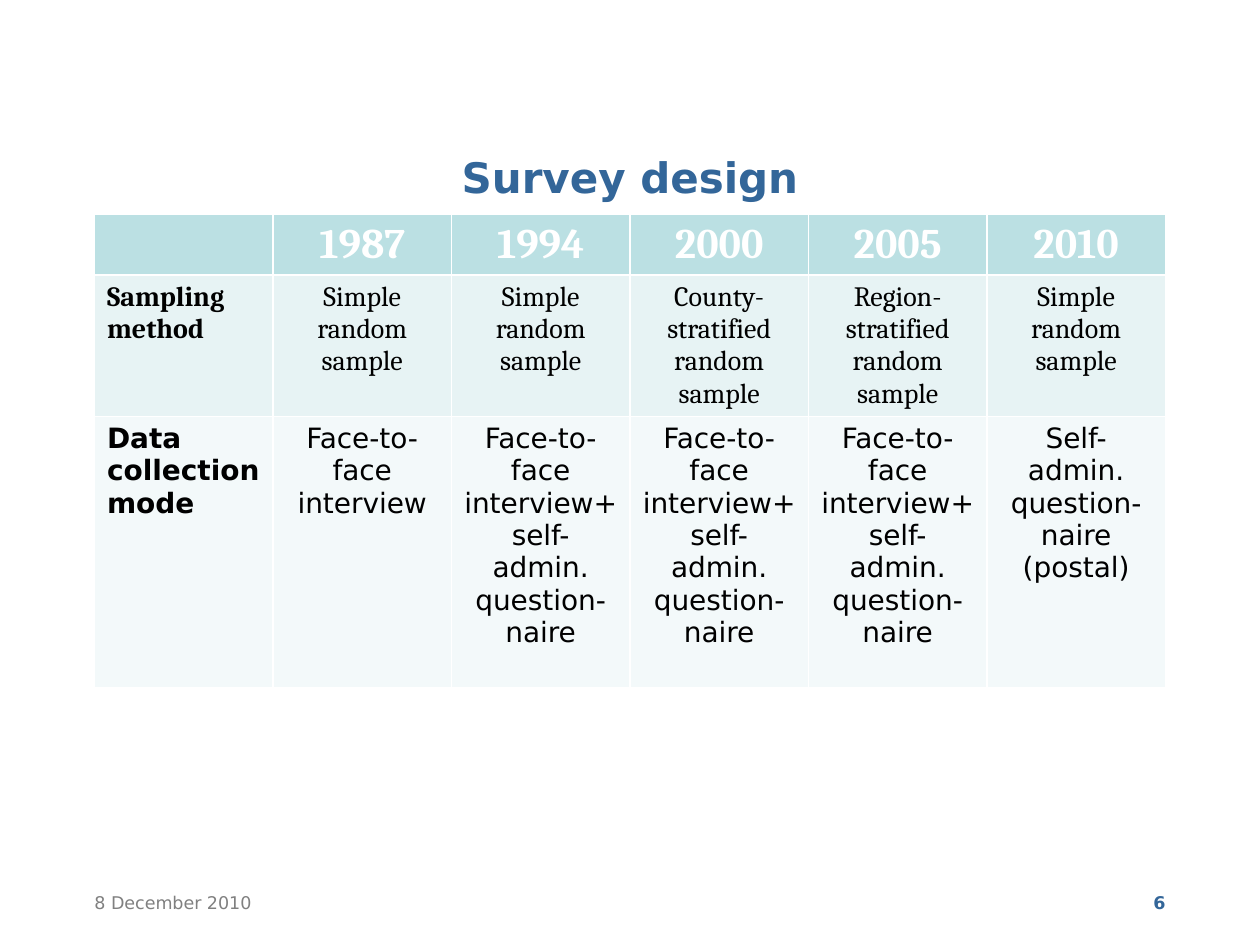
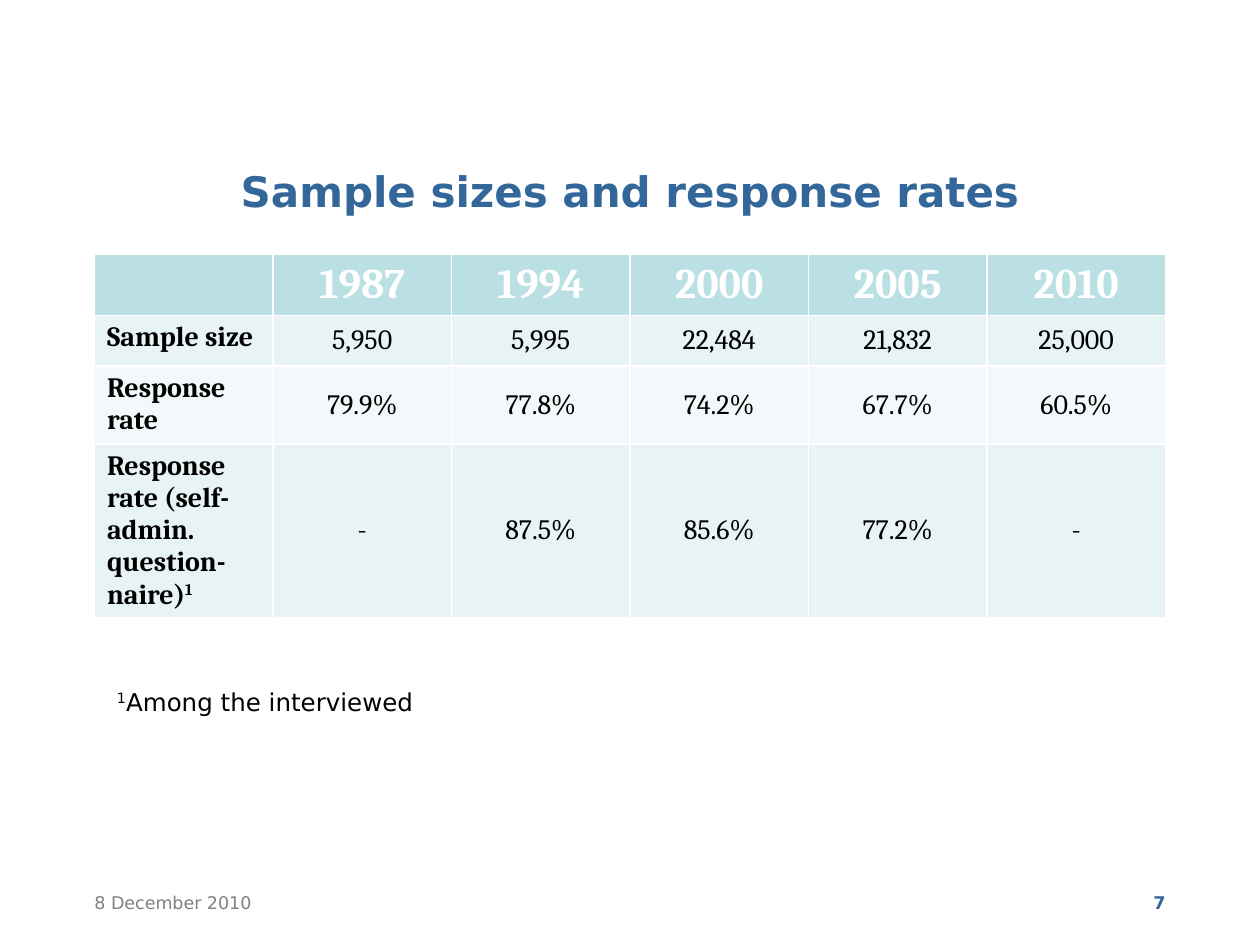
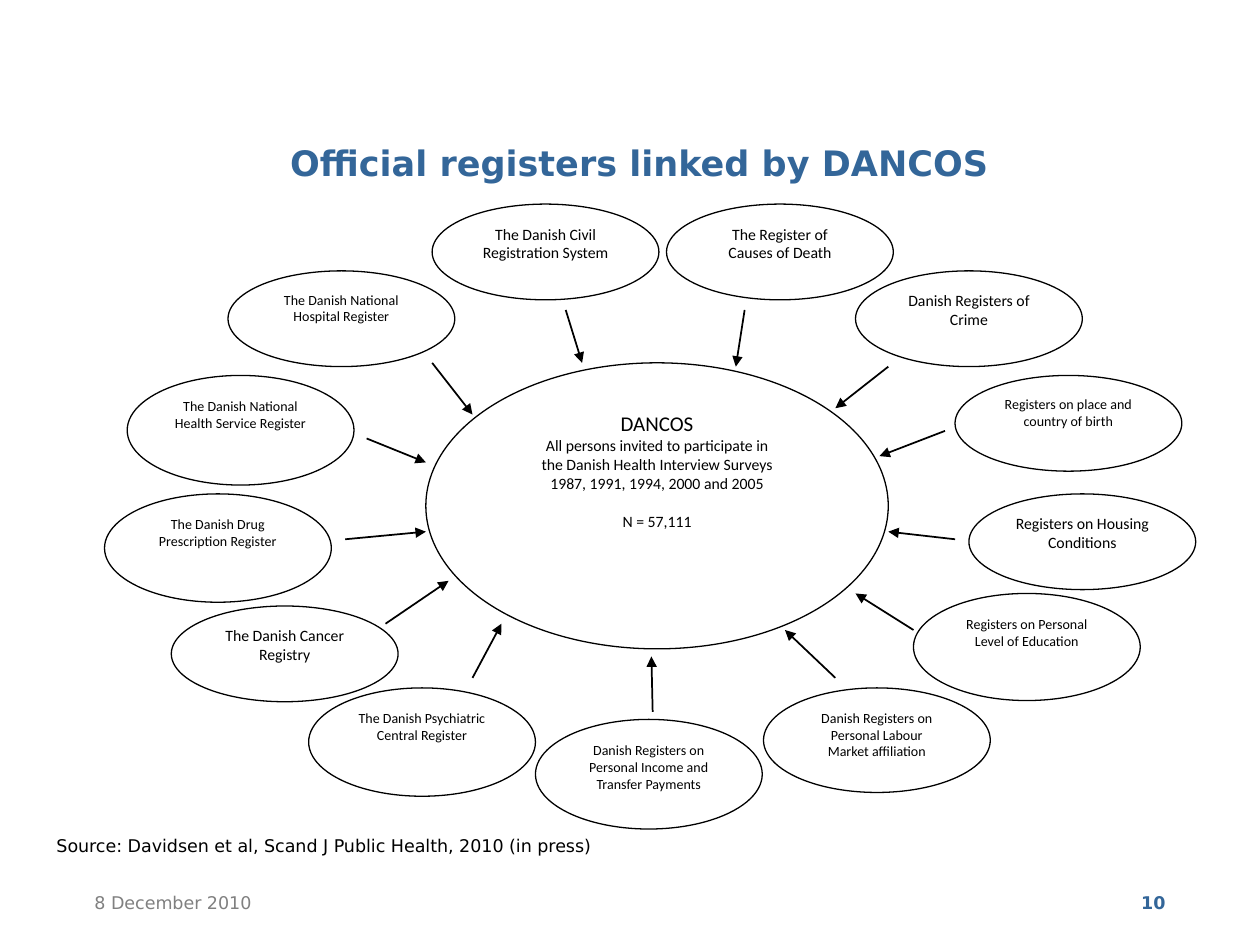
"""Builds three slides on Danish health surveys: design, response rates and linked registers."""
from dataclasses import dataclass

from lxml import etree
from pptx import Presentation
from pptx import util as u
from pptx.dml.color import RGBColor
from pptx.enum import shapes, text
from pptx.oxml.ns import qn

Inches = u.Inches
SANS, SERIF, DIAGRAM_FONT = "DejaVu Sans", "Cambria", "Calibri"
BLUE, GREY, BLACK, WHITE = "336699", "808080", "000000", "FFFFFF"
HEADER_FILL, BAND_FILLS = "BBE0E3", ("E7F3F4", "F3F9FA")
LEFT, CENTER, RIGHT = text.PP_ALIGN.LEFT, text.PP_ALIGN.CENTER, text.PP_ALIGN.RIGHT
TOP, MIDDLE, BOTTOM = text.MSO_ANCHOR.TOP, text.MSO_ANCHOR.MIDDLE, text.MSO_ANCHOR.BOTTOM
MARGIN, CONTENT_WIDTH = 0.75, 8.5
YEARS = ("1987", "1994", "2000", "2005", "2010")
REGISTER_WIDTH = 1.8


@dataclass
class Row:
    label: str
    values: tuple[str, ...]
    height: float
    font: str = SERIF


@dataclass
class Register:
    name: str
    left: float
    top: float
    height: float
    size: int
    arrow_from: tuple[float, float]
    arrow_to: tuple[float, float]


DESIGN_ROWS = (
    Row("Sampling method",
        ("Simple random sample", "Simple random sample", "County-stratified random sample",
         "Region-stratified random\nsample", "Simple random sample"), 1.12),
    Row("Data collection mode",
        ("Face-to-face interview",
         *["Face-to-face interview+ self-admin. question-naire"] * 3,
         "Self-admin. question-naire (postal)"), 2.15, SANS),
)

RESPONSE_ROWS = (
    Row("Sample size", ("5,950", "5,995", "22,484", "21,832", "25,000"), 0.4),
    Row("Response rate", ("79.9%", "77.8%", "74.2%", "67.7%", "60.5%"), 0.62),
    Row("Response rate (self-admin. question-naire)^1",
        ("-", "87.5%", "85.6%", "77.2%", "-"), 1.37),
)

REGISTERS = (
    Register("The Danish National Health Service Register",
             1.01, 2.98, 0.87, 8, (2.91, 3.48), (3.38, 3.67)),
    Register("The Danish National Hospital Register",
             1.81, 2.15, 0.76, 8, (3.43, 2.88), (3.75, 3.29)),
    Register("The Register of Causes of Death",
             5.29, 1.62, 0.76, 9, (5.91, 2.46), (5.84, 2.91)),
    Register("The Danish Civil Registration System",
             3.43, 1.62, 0.76, 9, (4.49, 2.46), (4.62, 2.88)),
    Register("Danish Registers of Crime",
             6.79, 2.15, 0.76, 9, (7.05, 2.91), (6.63, 3.24)),
    Register("Registers on Housing Conditions",
             7.69, 3.92, 0.76, 9, (7.58, 4.28), (7.05, 4.22)),
    Register("The Danish Drug Prescription Register",
             0.83, 3.92, 0.86, 8, (2.74, 4.28), (3.38, 4.22)),
    Register("Registers on place and country of birth",
             7.58, 2.98, 0.76, 8, (7.5, 3.42), (6.98, 3.62)),
    Register("The Danish Psychiatric Central Register",
             2.45, 5.46, 0.86, 8, (3.75, 5.38), (3.98, 4.95)),
    Register("Danish Registers on Personal Income and Transfer Payments",
             4.25, 5.71, 0.87, 8, (5.18, 5.65), (5.17, 5.21)),
    Register("Registers on Personal Level of Education",
             7.25, 4.71, 0.85, 8, (7.25, 5), (6.79, 4.71)),
    Register("Danish Registers on Personal Labour Market affiliation",
             6.06, 5.46, 0.83, 8, (6.63, 5.38), (6.23, 5)),
    Register("The Danish Cancer Registry",
             1.36, 4.81, 0.76, 9, (3.06, 4.95), (3.56, 4.61)),
)


def rgb(value: str) -> RGBColor:
    return RGBColor.from_string(value)


def write(frame, content: str, *, size: float, font: str = SANS, color: str = BLACK,
          bold: bool = False, align=LEFT, space_before: float = 0) -> None:
    """Append one paragraph per line; the character after ^ is superscript."""
    for line in content.split("\n"):
        paragraph = frame.paragraphs[-1]
        if paragraph.runs:
            paragraph = frame.add_paragraph()
        paragraph.alignment = align
        if space_before:
            paragraph.space_before = u.Pt(space_before)
        before, _, after = line.partition("^")
        for part, raised in ((before, False), (after[:1], True), (after[1:], False)):
            if not part:
                continue
            run = paragraph.add_run()
            run.text = part
            run.font.size, run.font.name, run.font.bold = u.Pt(size), font, bold
            run.font.color.rgb = rgb(color)
            if raised:
                run.font._element.set("baseline", "30000")


def set_frame(frame, anchor=TOP, inset: tuple[float, float] = (0.1, 0.05)) -> None:
    frame.word_wrap = True
    frame.auto_size = text.MSO_AUTO_SIZE.NONE
    frame.vertical_anchor = anchor
    frame.margin_left = frame.margin_right = Inches(inset[0])
    frame.margin_top = frame.margin_bottom = Inches(inset[1])


def add_note(slide, content: str, left: float, top: float, width: float, height: float,
             inset: tuple[float, float] = (0.1, 0.05), **style) -> None:
    box = slide.shapes.add_textbox(Inches(left), Inches(top), Inches(width), Inches(height))
    set_frame(box.text_frame, inset=inset)
    write(box.text_frame, content, **style)


def add_slide(deck, title: str, number: int, top: float, height: float, *,
              left: float = MARGIN, width: float = CONTENT_WIDTH, size: float = 24,
              inset: tuple[float, float] = (0, 0)):
    """Add a titled slide with the date and slide number at its foot."""
    slide = deck.slides.add_slide(deck.slide_layouts[5])
    heading = slide.shapes.title
    heading.left, heading.top = Inches(left), Inches(top)
    heading.width, heading.height = Inches(width), Inches(height)
    set_frame(heading.text_frame, BOTTOM, inset)
    write(heading.text_frame, title, size=size, color=BLUE, bold=True, align=CENTER)
    add_note(slide, "8 December 2010", MARGIN, 7.08, 7, 0.2, (0, 0), size=10, color=GREY)
    add_note(slide, str(number), 7.83, 7.08, 1.42, 0.17, (0, 0),
             size=10, color=BLUE, bold=True, align=RIGHT)
    return slide


def add_year_table(slide, rows: tuple[Row, ...], top: float, value_anchor=TOP) -> None:
    """Draw a table with one column per survey year."""
    lines = (Row("", YEARS, 0.48), *rows)
    table = slide.shapes.add_table(
        len(lines), len(YEARS) + 1, Inches(MARGIN), Inches(top),
        Inches(CONTENT_WIDTH), Inches(sum(line.height for line in lines))).table
    for column in table.columns:
        column.width = Inches(CONTENT_WIDTH / len(table.columns))
    for row_index, line in enumerate(lines):
        table.rows[row_index].height = Inches(line.height)
        is_header = row_index == 0
        fill = HEADER_FILL if is_header else BAND_FILLS[(row_index - 1) % 2]
        for column_index, content in enumerate((line.label, *line.values)):
            is_label = column_index == 0
            cell = table.cell(row_index, column_index)
            cell.fill.solid()
            cell.fill.fore_color.rgb = rgb(fill)
            cell.vertical_anchor = TOP if is_header or is_label else value_anchor
            write(cell.text_frame, content, size=24 if is_header else 16, font=line.font,
                  color=WHITE if is_header else BLACK, bold=is_header or is_label,
                  align=LEFT if is_label else CENTER)


def add_ellipse(slide, left: float, top: float, width: float, height: float):
    ellipse = slide.shapes.add_shape(shapes.MSO_SHAPE.OVAL, Inches(left), Inches(top),
                                     Inches(width), Inches(height))
    ellipse.shadow.inherit = False
    ellipse.fill.solid()
    ellipse.fill.fore_color.rgb = rgb(WHITE)
    ellipse.line.color.rgb = rgb(BLACK)
    ellipse.line.width = u.Pt(0.75)
    set_frame(ellipse.text_frame)
    return ellipse.text_frame


def add_arrow(slide, start: tuple[float, float], end: tuple[float, float]) -> None:
    arrow = slide.shapes.add_connector(shapes.MSO_CONNECTOR.STRAIGHT,
                                       *map(Inches, (*start, *end)))
    arrow.line.color.rgb = rgb(BLACK)
    arrow.line.width = u.Pt(1)
    etree.SubElement(arrow.line._get_or_add_ln(), qn("a:tailEnd"), type="triangle")
    etree.SubElement(arrow._element.spPr, qn("a:effectLst"))


def add_register_diagram(slide) -> None:
    """Draw the cohort in the middle and the registers that feed it."""
    cohort = add_ellipse(slide, 3.38, 2.88, 3.67, 2.27)
    write(cohort, "DANCOS", size=12, font=DIAGRAM_FONT, align=CENTER)
    write(cohort, "All persons invited to participate in\nthe Danish Health Interview Surveys\n"
                  "1987, 1991, 1994, 2000 and 2005", size=9, font=DIAGRAM_FONT, align=CENTER)
    write(cohort, "N = 57,111", size=9, font=DIAGRAM_FONT, align=CENTER, space_before=11)
    for register in REGISTERS:
        label = add_ellipse(slide, register.left, register.top, REGISTER_WIDTH, register.height)
        write(label, register.name, size=register.size, font=DIAGRAM_FONT, align=CENTER)
    for register in REGISTERS:
        add_arrow(slide, register.arrow_from, register.arrow_to)


def main() -> None:
    deck = Presentation()
    deck.slide_width, deck.slide_height = Inches(10), Inches(7.5)

    design = add_slide(deck, "Survey design", 6, 0.99, 0.61)
    add_year_table(design, DESIGN_ROWS, 1.7)

    response = add_slide(deck, "Sample sizes and response rates", 7, 1.17, 0.54)
    add_year_table(response, RESPONSE_ROWS, 2.02, MIDDLE)
    add_note(response, "^1Among the interviewed", 0.83, 5.4, 5.98, 0.34, size=14)

    linkage = add_slide(deck, "Official registers linked by DANCOS", 10, 1.07, 0.44,
                        left=1.06, width=8.03, size=20, inset=(0.1, 0.05))
    add_register_diagram(linkage)
    add_note(linkage, "Source: Davidsen et al, Scand J Public Health, 2010 (in press)",
             0.35, 6.58, 6.77, 0.67, size=10)

    deck.save("out.pptx")


if __name__ == "__main__":
    main()
